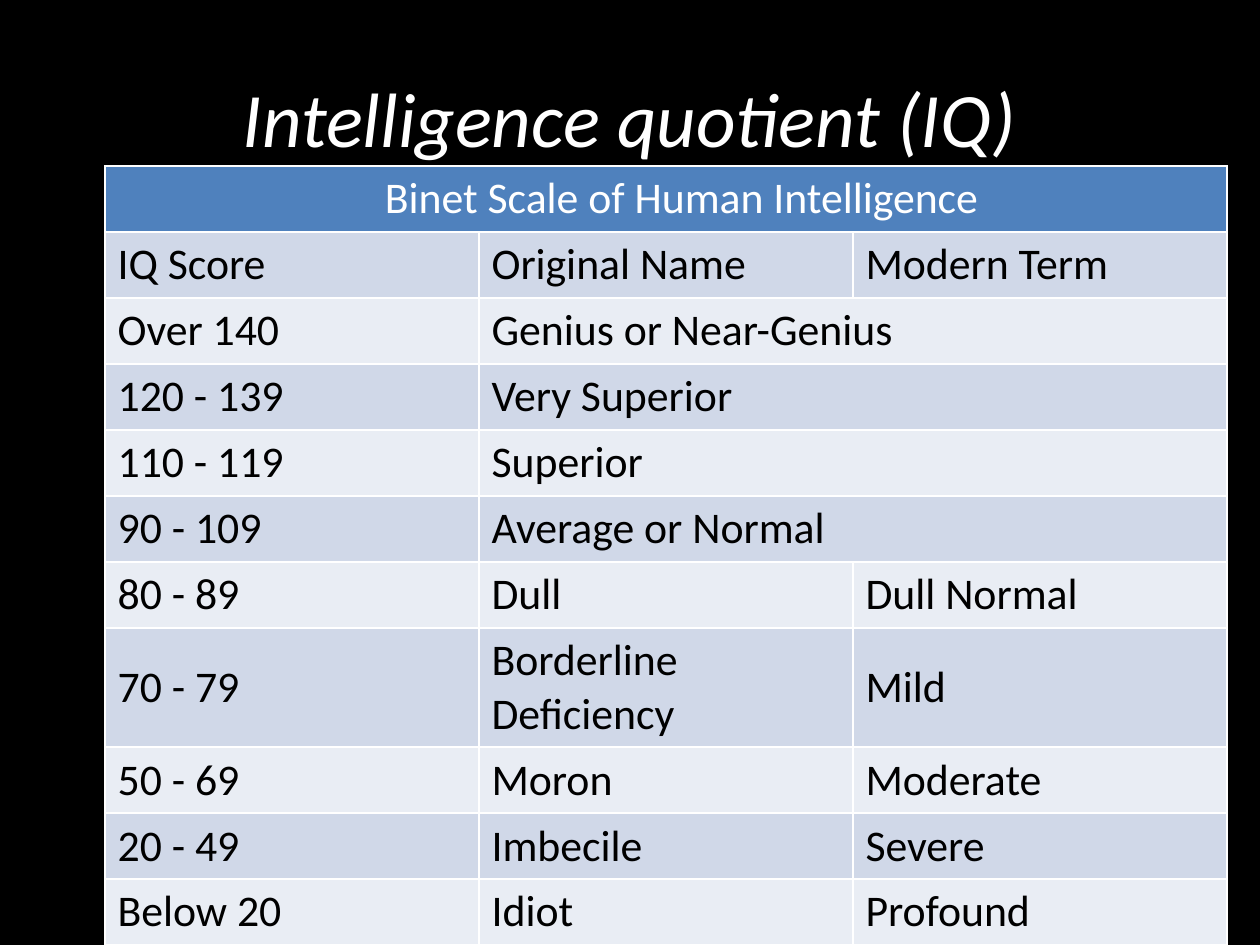
"""Build a slide with the Binet scale of human intelligence as a table."""
from dataclasses import dataclass

from pptx import Presentation
from pptx.dml.color import RGBColor
from pptx.enum.text import MSO_ANCHOR as Anchor, PP_ALIGN as Align
from pptx.table import Table
from pptx.text.text import TextFrame
from pptx.util import Emu, Pt

EMU_PER_INCH = 914400
PX_PER_INCH = 126
COLORS = {
    "background": "000000",
    "light_text": "FFFFFF",
    "dark_text": "000000",
    "heading": "4F81BD",
    "odd_band": "D0D8E8",
    "even_band": "E9EDF4",
}
COLUMN_WIDTH = 374
ROW_HEIGHT = 60
HEADING_INDENT = 280


@dataclass(frozen=True)
class ScaleRow:
    score: str
    original_name: str
    modern_term: str = ""


SCALE = [
    ScaleRow("IQ Score", "Original Name", "Modern Term"),
    ScaleRow("Over 140", "Genius or Near-Genius"),
    ScaleRow("120 - 139", "Very Superior"),
    ScaleRow("110 - 119", "Superior"),
    ScaleRow("90 - 109", "Average or Normal"),
    ScaleRow("80 - 89", "Dull", "Dull Normal"),
    ScaleRow("70 - 79", "Borderline Deficiency", "Mild"),
    ScaleRow("50 - 69", "Moron", "Moderate"),
    ScaleRow("20 - 49", "Imbecile", "Severe"),
    ScaleRow("Below 20", "Idiot", "Profound"),
]


def px(length: int) -> Emu:
    return Emu(round(length * EMU_PER_INCH / PX_PER_INCH))


def rgb(name: str) -> RGBColor:
    return RGBColor.from_string(COLORS[name])


def write(frame: TextFrame, text: str, *, size: int = 25, color: str = "dark_text",
          italic: bool = False, align: Align = Align.LEFT) -> None:
    paragraph = frame.paragraphs[0]
    paragraph.alignment = align
    run = paragraph.add_run()
    run.text = text
    font = run.font
    font.name, font.size = "Calibri", Pt(size)
    font.bold, font.italic = False, italic
    font.color.rgb = rgb(color)


def fill_row(scale_table: Table, row: int, texts: list[str], *, fill: str,
             color: str = "dark_text") -> None:
    last = len(scale_table.columns) - 1
    for column in range(last + 1):
        cell = scale_table.cell(row, column)
        cell.fill.solid()
        cell.fill.fore_color.rgb = rgb(fill)
        cell.vertical_anchor = Anchor.MIDDLE
        if column < len(texts):
            write(cell.text_frame, texts[column], color=color)
    if len(texts) <= last:
        scale_table.cell(row, len(texts) - 1).merge(scale_table.cell(row, last))


def main() -> None:
    deck = Presentation()
    deck.slide_width, deck.slide_height = px(1260), px(945)
    slide = deck.slides.add_slide(deck.slide_layouts[5])
    slide.background.fill.solid()
    slide.background.fill.fore_color.rgb = rgb("background")

    title = slide.shapes.title
    title.left, title.top, title.width, title.height = map(px, (63, 38, 1134, 158))
    title.text_frame.vertical_anchor = Anchor.MIDDLE
    write(title.text_frame, "Intelligence quotient (IQ)", size=44,
          color="light_text", italic=True, align=Align.CENTER)

    row_count = len(SCALE) + 1
    scale_table = slide.shapes.add_table(
        row_count, 3, px(105), px(166), px(3 * COLUMN_WIDTH), px(row_count * ROW_HEIGHT)
    ).table
    for column in scale_table.columns:
        column.width = px(COLUMN_WIDTH)
    for table_row in scale_table.rows:
        table_row.height = px(ROW_HEIGHT)

    fill_row(scale_table, 0, ["Binet Scale of Human Intelligence"],
             fill="heading", color="light_text")
    scale_table.cell(0, 0).margin_left = px(HEADING_INDENT)
    for row, entry in enumerate(SCALE, start=1):
        texts = [entry.score, entry.original_name, entry.modern_term]
        fill_row(scale_table, row, [text for text in texts if text],
                 fill="odd_band" if row % 2 else "even_band")

    deck.save("out.pptx")


if __name__ == "__main__":
    main()
